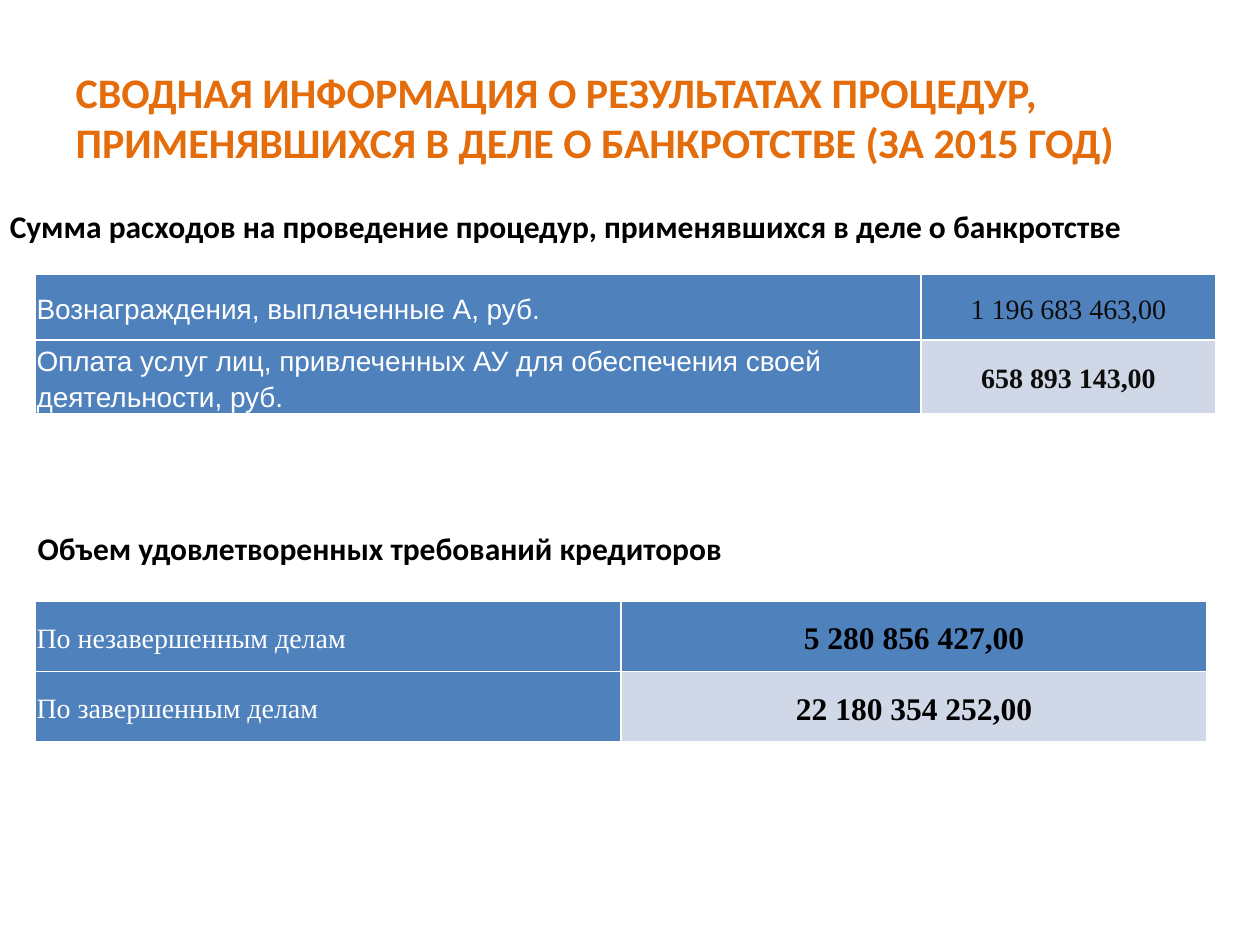
from lxml.etree import SubElement
from pptx import Presentation
from pptx.dml.color import RGBColor
from pptx.enum.text import MSO_ANCHOR, MSO_AUTO_SIZE, PP_ALIGN
from pptx.oxml.ns import qn
from pptx.util import Inches, Pt

BLUE, PALE, WHITE = "4F81BD", "D0D8E8", "FFFFFF"
BLACK, DARK, ORANGE = "000000", "0D0D0D", "E46C0A"
SERIF = "Times New Roman"


def color(value):
    """Turn a hex string into a colour."""
    return RGBColor.from_string(value)


def add_text(para, text, size, font, fill, bold):
    """Add one formatted run to a paragraph."""
    span = para.add_run()
    span.text = text
    span.font.size = Pt(size)
    span.font.name = font
    span.font.color.rgb = color(fill)
    span.font.bold = bold


def set_title(page, text):
    """Place and fill the title placeholder."""
    title = page.shapes.title
    title.left, title.top = Inches(0.5), Inches(0.3)
    title.width, title.height = Inches(9), Inches(1.25)
    title.text_frame.vertical_anchor = MSO_ANCHOR.MIDDLE
    para = title.text_frame.paragraphs[0]
    para.alignment = PP_ALIGN.LEFT
    add_text(para, text, 24, "Calibri", ORANGE, True)


def add_heading(page, left, top, width, text):
    """Add a bold heading above a table."""
    box = page.shapes.add_textbox(Inches(left), Inches(top), Inches(width), Inches(0.57))
    frame = box.text_frame
    frame.word_wrap = False
    frame.auto_size = MSO_AUTO_SIZE.SHAPE_TO_FIT_TEXT
    frame.vertical_anchor = MSO_ANCHOR.MIDDLE
    add_text(frame.paragraphs[0], text, 18, "Calibri", BLACK, True)


def set_borders(cell):
    """Draw thin white lines on all four sides of a cell."""
    properties = cell._tc.get_or_add_tcPr()
    for index, side in enumerate(("a:lnL", "a:lnR", "a:lnT", "a:lnB")):
        line = properties.makeelement(qn(side), {"w": str(Pt(1))})
        fill = SubElement(line, qn("a:solidFill"))
        SubElement(fill, qn("a:srgbClr"), val=WHITE)
        properties.insert(index, line)


def fill_cell(cell, fill, align, text_style):
    """Format a cell and write its text."""
    cell.fill.solid()
    cell.fill.fore_color.rgb = color(fill)
    cell.vertical_anchor = MSO_ANCHOR.MIDDLE
    cell.margin_left = cell.margin_right = Inches(0.01)
    cell.margin_top = cell.margin_bottom = Inches(0.01)
    set_borders(cell)
    para = cell.text_frame.paragraphs[0]
    para.alignment = align
    para.line_spacing = 1.15
    add_text(para, *text_style)


def add_amounts(page, top, widths, heights, rows):
    """Add a table of labels and amounts."""
    frame = page.shapes.add_table(
        len(rows), 2, Inches(0.28), Inches(top), Inches(sum(widths)), Inches(sum(heights))
    )
    table = frame.table
    for column, width in zip(table.columns, widths):
        column.width = Inches(width)
    for index, (label, amount) in enumerate(rows):
        table.rows[index].height = Inches(heights[index])
        fill_cell(table.cell(index, 0), BLUE, PP_ALIGN.LEFT, label)
        fill_cell(table.cell(index, 1), PALE if index else BLUE, PP_ALIGN.CENTER, amount)


def main():
    """Build the slide and save the deck."""
    deck = Presentation()
    deck.slide_width, deck.slide_height = Inches(10), Inches(7.5)
    page = deck.slides.add_slide(deck.slide_layouts[5])
    set_title(
        page,
        "СВОДНАЯ ИНФОРМАЦИЯ О РЕЗУЛЬТАТАХ ПРОЦЕДУР, "
        "ПРИМЕНЯВШИХСЯ В ДЕЛЕ О БАНКРОТСТВЕ (ЗА 2015 ГОД)",
    )
    expenses = [
        (
            ("Вознаграждения, выплаченные А, руб.", 16, "Arial", WHITE, False),
            ("1 196 683 463,00", 16, SERIF, DARK, False),
        ),
        (
            ("Оплата услуг лиц, привлеченных АУ для обеспечения своей деятельности, руб.",
             16, "Arial", WHITE, False),
            ("658 893 143,00", 16, SERIF, DARK, True),
        ),
    ]
    claims = [
        (
            ("По незавершенным делам", 16, SERIF, WHITE, False),
            ("5 280 856 427,00", 18, SERIF, BLACK, True),
        ),
        (
            ("По завершенным делам", 16, SERIF, WHITE, False),
            ("22 180 354 252,00", 18, SERIF, BLACK, True),
        ),
    ]
    add_amounts(page, 2.18, (7.03, 2.34), (0.52, 0.54), expenses)
    add_heading(
        page, -0.02, 1.51, 9.1,
        "Сумма расходов на проведение процедур, применявшихся в деле о банкротстве",
    )
    add_amounts(page, 4.77, (4.65, 4.65), (0.56, 0.56), claims)
    add_heading(page, 0.2, 4.06, 5.68, "Объем удовлетворенных требований кредиторов")
    deck.save("out.pptx")


if __name__ == "__main__":
    main()
